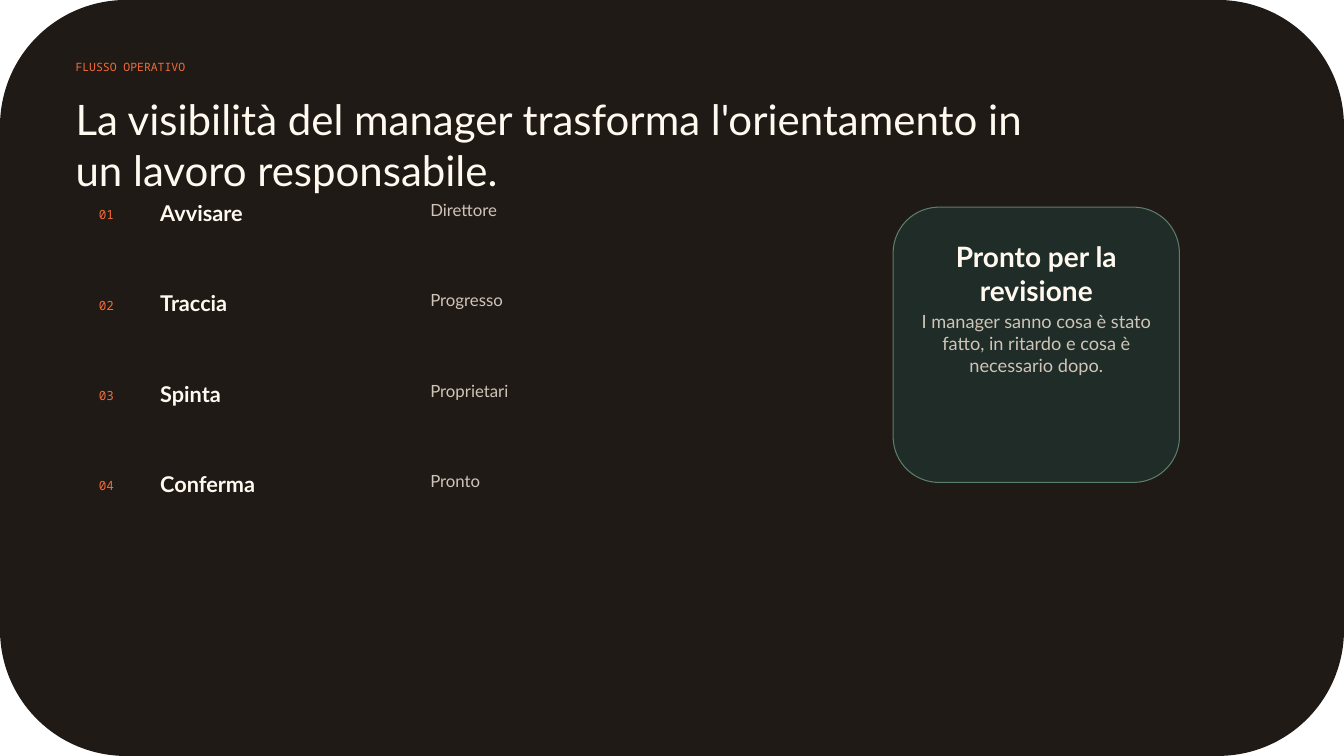
from pptx import Presentation
from pptx.dml.color import RGBColor
from pptx.enum.shapes import MSO_SHAPE
from pptx.enum.text import PP_ALIGN
from pptx.util import Pt

ROUND = MSO_SHAPE.ROUNDED_RECTANGLE
LEFT, MID = PP_ALIGN.LEFT, PP_ALIGN.CENTER
CREAM, SAND, RUST = "FFF9EF", "CFC4B8", "F26B3A"
DARK, GREEN, EDGE = "201A16", "1F2C27", "5C7E6B"
SANS, MONO = "Lato", "Noto Sans Mono"


def color(code):
    return RGBColor.from_string(code)


def write(text, x, y, w, h, hue, style, align=LEFT):
    """Add a wrapped text box without margins, styled from a dict."""
    frame = slide.shapes.add_textbox(Pt(x), Pt(y), Pt(w), Pt(h)).text_frame
    frame.word_wrap = True
    for side in ("left", "top", "right", "bottom"):
        setattr(frame, "margin_" + side, 0)
    para = frame.paragraphs[0]
    para.alignment = align
    run = para.add_run()
    run.text = text
    run.font.color.rgb = color(hue)
    for key, value in style.items():
        setattr(run.font, key, value)


deck = Presentation()
deck.slide_width, deck.slide_height = Pt(960), Pt(540)
slide = deck.slides.add_slide(deck.slide_layouts[6])

# Dark rounded panel
panel = slide.shapes.add_shape(ROUND, 0, 0, Pt(960), Pt(540))
panel.shadow.inherit = False
panel.fill.solid()
panel.fill.fore_color.rgb = color(DARK)
panel.line.fill.background()

# Heading
write("FLUSSO OPERATIVO", 54, 43.2, 330, 20, RUST,
      {"name": MONO, "size": Pt(8.2)})
write("La visibilità del manager trasforma l'orientamento in un lavoro responsabile.",
      54, 67, 677.5, 51, CREAM, {"name": SANS, "size": Pt(30)})

# Numbered steps
steps = [("Avvisare", "Direttore"), ("Traccia", "Progresso"),
         ("Spinta", "Proprietari"), ("Conferma", "Pronto")]
for i, (step, detail) in enumerate(steps):
    top = 142.6 + 64.55 * i
    write(f"{i + 1:02}", 70.6, top + 5.4, 39.6, 17, RUST,
          {"name": MONO, "size": Pt(9)})
    write(step, 114.5, top, 204.5, 20, CREAM,
          {"name": SANS, "size": Pt(15.5), "bold": True})
    write(detail, 307.4, top, 283.7, 22, SAND,
          {"name": SANS, "size": Pt(12)})

# Outcome card
card = slide.shapes.add_shape(ROUND, Pt(638), Pt(148), Pt(204.5), Pt(196.6))
card.shadow.inherit = False
card.fill.solid()
card.fill.fore_color.rgb = color(GREEN)
card.line.color.rgb = color(EDGE)
card.line.width = Pt(0.75)
write("Pronto per la revisione", 657.4, 171.4, 165.6, 33, CREAM,
      {"name": SANS, "size": Pt(20), "bold": True}, MID)
write("I manager sanno cosa è stato fatto, in ritardo e cosa è necessario dopo.",
      657.4, 221.8, 165.6, 70.6, SAND, {"name": SANS, "size": Pt(13)}, MID)

deck.save("out.pptx")
